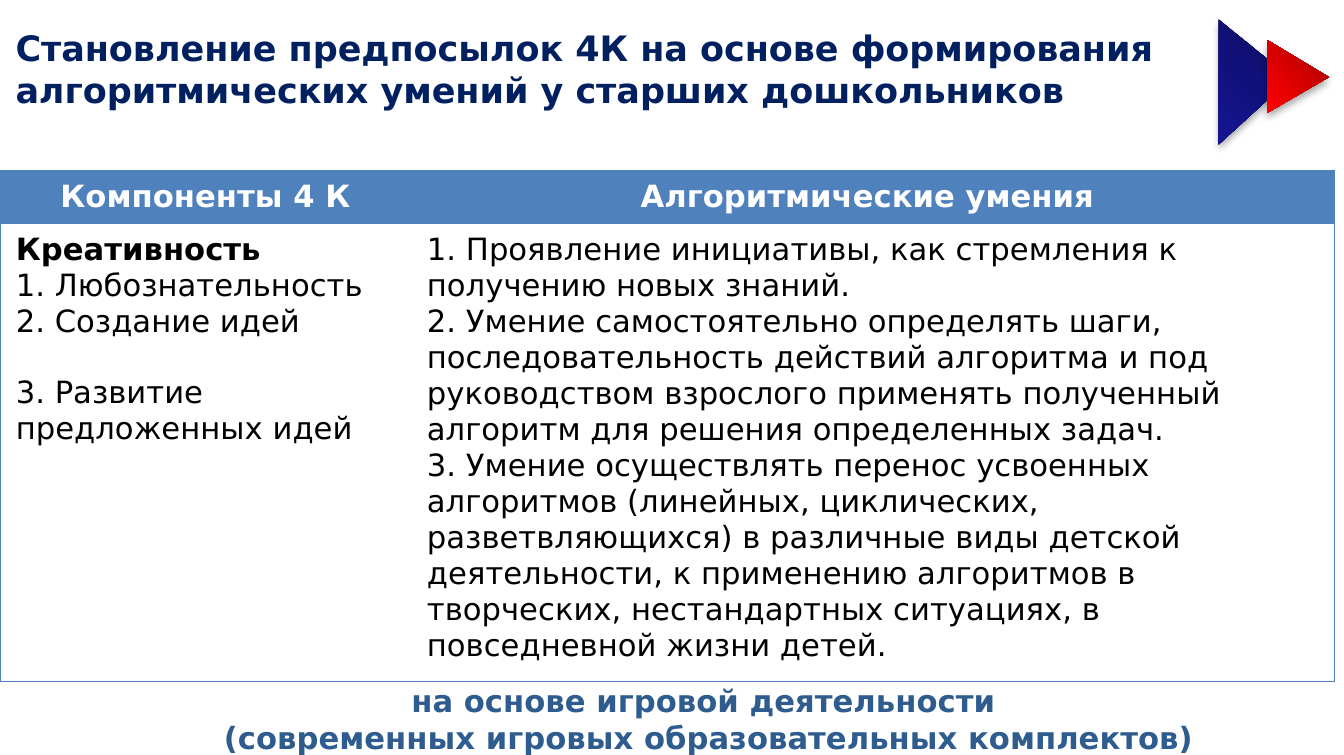
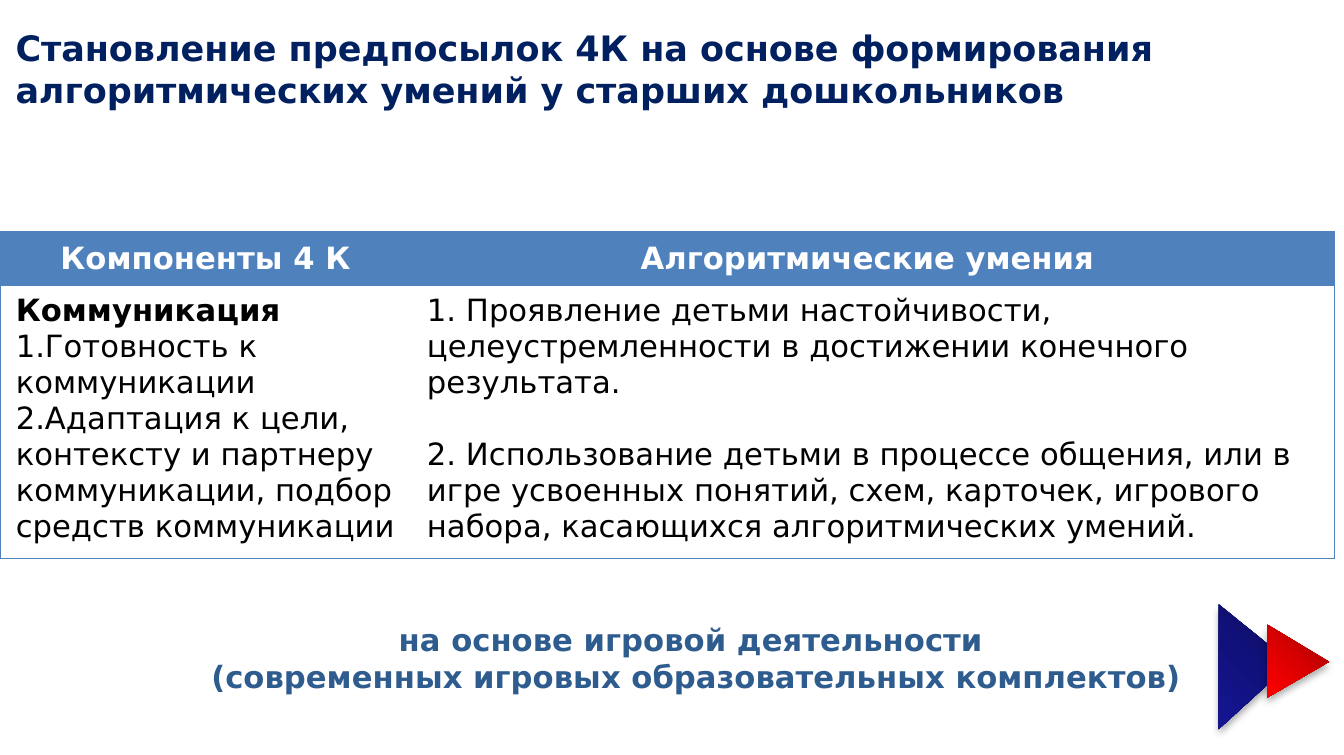
from dataclasses import dataclass

from lxml.etree import SubElement
from pptx import Presentation
from pptx.dml.color import RGBColor
from pptx.enum.shapes import MSO_SHAPE as Preset
from pptx.enum.text import MSO_ANCHOR as Anchor, PP_ALIGN as Align
from pptx.oxml.ns import qn
from pptx.util import Inches, Pt


@dataclass(frozen=True)
class Theme:
    font: str = "DejaVu Sans"
    title: str = "002060"
    accent: str = "4F81BD"
    footer: str = "2E5C8E"
    text: str = "000000"
    white: str = "FFFFFF"
    blue_stops: tuple = ("0C0C57", "11117C", "151593")
    red_stops: tuple = ("970000", "D70000", "FF0000")
    title_size: float = 16
    body_size: float = 14
    border: float = 0.5
    line_gap: float = 16.3


TITLE = ("Становление предпосылок 4К на основе формирования "
         "алгоритмических умений у старших дошкольников")
HEADERS = ("Компоненты 4 К", "Алгоритмические умения ")
FOOTER = ("на основе игровой деятельности ",
          "(современных игровых образовательных комплектов)")
COLUMNS = (2.61, 5.86)
HEADER_HEIGHT = 0.34
PLAIN_TABLE = "{2D5ABB26-0587-4C30-8999-92F81FD0307C}"

# gap_before holds the (column, paragraph) that starts one line lower
SLIDES = [
    dict(
        table_top=1.08, body_height=2.89, footer_at=(0.47, 4.28), arrows_top=0.29,
        gap_before=(0, 3),
        cells=(
            ("Креативность", "1. Любознательность", "2. Создание идей",
             "3. Развитие предложенных идей"),
            ("1. Проявление инициативы, как стремления к получению новых знаний.",
             "2. Умение самостоятельно определять шаги, последовательность действий "
             "алгоритма и под руководством взрослого применять полученный алгоритм "
             "для решения определенных задач.",
             "3. Умение осуществлять перенос усвоенных алгоритмов (линейных, "
             "циклических, разветвляющихся) в различные виды детской деятельности, "
             "к применению алгоритмов в творческих, нестандартных ситуациях, "
             "в повседневной жизни детей."),
        ),
    ),
    dict(
        table_top=1.47, body_height=1.73, footer_at=(0.39, 3.89), arrows_top=4,
        gap_before=(1, 1),
        cells=(
            ("Коммуникация", "1.Готовность к коммуникации",
             "2.Адаптация к цели, контексту и партнеру коммуникации, "
             "подбор средств коммуникации"),
            ("1. Проявление детьми настойчивости, целеустремленности в достижении "
             "конечного результата.",
             "2. Использование детьми в процессе общения, или в игре усвоенных "
             "понятий, схем, карточек, игрового набора, касающихся "
             "алгоритмических умений."),
        ),
    ),
]


class Deck:
    def __init__(self, theme):
        self.theme = theme
        self.deck = Presentation()
        self.deck.slide_width = Inches(8.53)
        self.deck.slide_height = Inches(4.79)
        self.page = None

    def add_page(self):
        self.page = self.deck.slides.add_slide(self.deck.slide_layouts[6])

    def fill_text(self, frame, lines, size, color, bold=False, align=Align.LEFT):
        for index, line in enumerate(lines):
            para = frame.paragraphs[0] if index == 0 else frame.add_paragraph()
            para.alignment = align
            span = para.add_run()
            span.text = line
            span.font.color.rgb = RGBColor.from_string(color)
            formats = {"name": self.theme.font, "size": Pt(size), "bold": bold}
            for name, value in formats.items():
                setattr(span.font, name, value)

    def text(self, left, top, width, height, lines, margins, **style):
        box = self.page.shapes.add_textbox(
            Inches(left), Inches(top), Inches(width), Inches(height))
        formats = {"word_wrap": True, "vertical_anchor": Anchor.TOP}
        formats.update({f"margin_{side}": Inches(gap) for side, gap in margins.items()})
        for name, value in formats.items():
            setattr(box.text_frame, name, value)
        self.fill_text(box.text_frame, lines, **style)

    def title(self):
        self.text(0, 0.12, 8.19, 0.65, [TITLE], {"left": 0.1, "right": 0.1},
                  size=self.theme.title_size, color=self.theme.title, bold=True)

    def footer(self, left, top):
        self.text(left, top, 8.06, 0.51, FOOTER,
                  {"left": 0.05, "top": 0.05, "right": 0.05, "bottom": 0},
                  size=self.theme.body_size, color=self.theme.footer,
                  bold=True, align=Align.CENTER)

    def paint_cell(self, cell, fill, sides):
        # Borders come before the fill in the cell properties
        properties = cell._tc.get_or_add_tcPr()
        for side in sides:
            line = SubElement(properties, qn(f"a:ln{side}"), w=str(Pt(self.theme.border)))
            solid = SubElement(line, qn("a:solidFill"))
            SubElement(solid, qn("a:srgbClr"), val=self.theme.accent)
        cell.fill.solid()
        cell.fill.fore_color.rgb = RGBColor.from_string(fill)

    def table(self, top, body_height, cells, gap_before):
        theme = self.theme
        frame = self.page.shapes.add_table(
            2, len(COLUMNS), Inches(0), Inches(top),
            Inches(sum(COLUMNS)), Inches(HEADER_HEIGHT + body_height))
        table = frame.table
        table.horz_banding = False
        table._tbl.tblPr.find(qn("a:tableStyleId")).text = PLAIN_TABLE
        for row, height in zip(table.rows, (HEADER_HEIGHT, body_height)):
            row.height = Inches(height)
        for index, (width, outer) in enumerate(zip(COLUMNS, "LR")):
            table.columns[index].width = Inches(width)
            header, body = table.cell(0, index), table.cell(1, index)
            self.paint_cell(header, theme.accent, outer + "T")
            self.paint_cell(body, theme.white, outer + "TB")
            header.vertical_anchor = Anchor.MIDDLE
            self.fill_text(header.text_frame, [HEADERS[index]], theme.body_size,
                           theme.white, bold=True, align=Align.CENTER)
            self.fill_text(body.text_frame, cells[index], theme.body_size, theme.text)
        # Component name in bold, and one line of space inside a column
        table.cell(1, 0).text_frame.paragraphs[0].runs[0].font.bold = True
        column, number = gap_before
        para = table.cell(1, column).text_frame.paragraphs[number]
        para.space_before = Pt(theme.line_gap)

    def triangle(self, left, top, width, height, peak, stops):
        shape = self.page.shapes.add_shape(
            Preset.ISOSCELES_TRIANGLE,
            Inches(left), Inches(top), Inches(width), Inches(height))
        shape.rotation = 90
        shape.adjustments[0] = peak
        properties = shape._element.spPr
        # Three-stop gradient
        gradient = SubElement(properties, qn("a:gradFill"), rotWithShape="1")
        stop_list = SubElement(gradient, qn("a:gsLst"))
        for index, color in enumerate(stops):
            stop = SubElement(stop_list, qn("a:gs"), pos=str(index * 50000))
            SubElement(stop, qn("a:srgbClr"), val=color)
        SubElement(gradient, qn("a:lin"), ang="2700000", scaled="1")
        shape.line.fill.background()
        # Soft shadow below
        shape.shadow.inherit = False
        shadow = SubElement(
            properties.find(qn("a:effectLst")), qn("a:outerShdw"),
            blurRad=str(Pt(3.5)), dist=str(Pt(2.2)), dir="5400000", rotWithShape="0")
        tint = SubElement(shadow, qn("a:srgbClr"), val=self.theme.text)
        SubElement(tint, qn("a:alpha"), val="32000")

    def arrows(self, top):
        self.triangle(7.57, top, 0.79, 0.46, 0.47, self.theme.blue_stops)
        self.triangle(8.01, top, 0.46, 0.39, 0.51, self.theme.red_stops)


def main():
    show = Deck(Theme())
    for content in SLIDES:
        show.add_page()
        show.title()
        show.table(content["table_top"], content["body_height"],
                   content["cells"], content["gap_before"])
        show.footer(*content["footer_at"])
        show.arrows(content["arrows_top"])
    show.deck.save("out.pptx")


if __name__ == "__main__":
    main()
